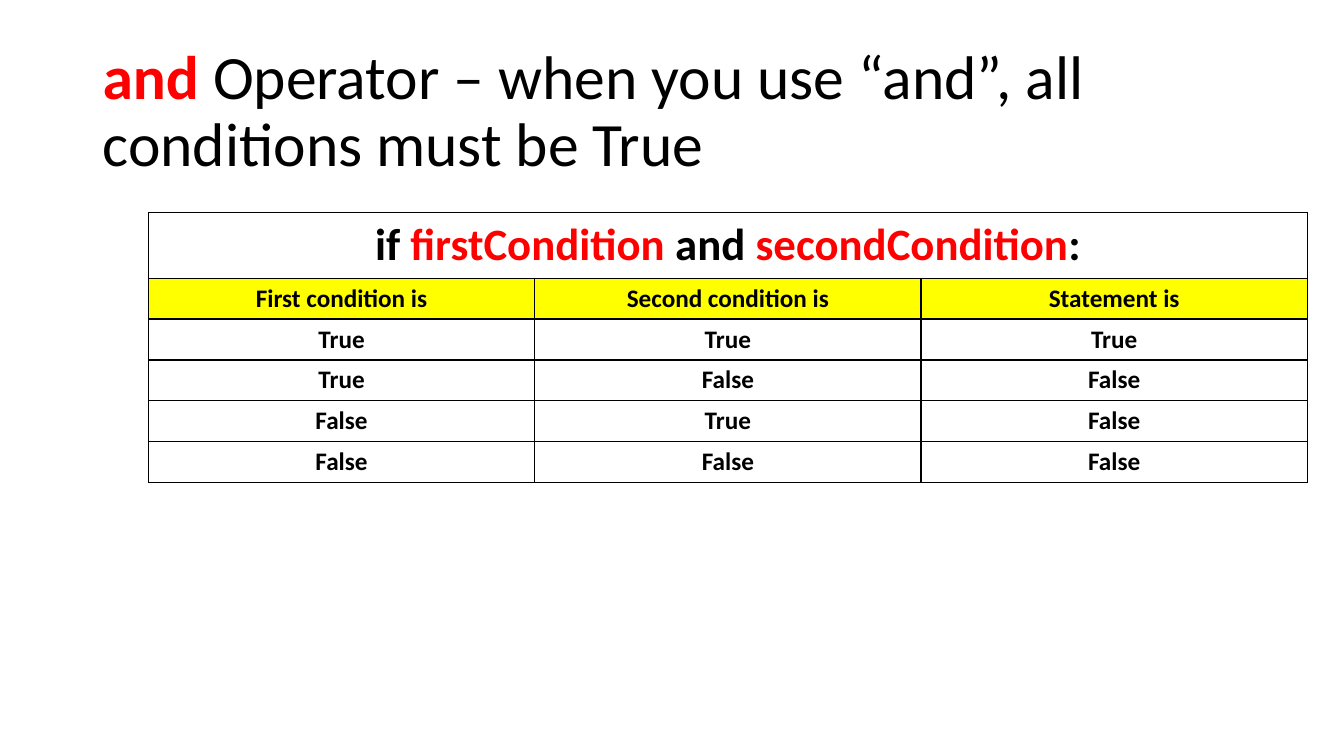
from dataclasses import dataclass
from itertools import product

from lxml import etree
from pptx import Presentation
from pptx.dml.color import RGBColor
from pptx.enum.text import MSO_ANCHOR, MSO_AUTO_SIZE, PP_ALIGN
from pptx.oxml.ns import qn
from pptx.util import Cm, Pt

LEFT = PP_ALIGN.LEFT
CENTER = PP_ALIGN.CENTER
MIDDLE = MSO_ANCHOR.MIDDLE
NO_AUTOFIT = MSO_AUTO_SIZE.NONE
TITLE_ONLY = 5


@dataclass(frozen=True)
class Theme:
    font: str = "Calibri"
    ink: str = "000000"
    accent: str = "FF0000"
    header: str = "FFFF00"
    title_size: int = 44
    rule_size: int = 32
    cell_size: int = 18
    border: int = 1


THEME = Theme()


@dataclass(frozen=True)
class Box:
    left: float
    top: float
    width: float
    height: float

    def lengths(self):
        return Cm(self.left), Cm(self.top), Cm(self.width), Cm(self.height)


def add_text(para, text, size, color=THEME.ink, bold=False):
    span = para.add_run()
    span.text = text
    span.font.name = THEME.font
    span.font.size = Pt(size)
    span.font.bold = bold
    span.font.color.rgb = RGBColor.from_string(color)


def add_borders(cell):
    properties = cell._tc.get_or_add_tcPr()
    for side in ("a:lnL", "a:lnR", "a:lnT", "a:lnB"):
        line = etree.SubElement(properties, qn(side), w=str(Pt(THEME.border)))
        fill = etree.SubElement(line, qn("a:solidFill"))
        etree.SubElement(fill, qn("a:srgbClr"), val=THEME.ink)


def format_cell(cell, fill=None):
    add_borders(cell)
    if fill:
        cell.fill.solid()
        cell.fill.fore_color.rgb = RGBColor.from_string(fill)
    else:
        cell.fill.background()
    para = cell.text_frame.paragraphs[0]
    para.alignment = CENTER
    return para


def fill_title(page, box):
    title = page.shapes.title
    title.left, title.top, title.width, title.height = box.lengths()
    frame = title.text_frame
    frame.word_wrap = True
    frame.auto_size = NO_AUTOFIT
    frame.vertical_anchor = MIDDLE
    para = frame.paragraphs[0]
    para.alignment = LEFT
    para.line_spacing = 0.9
    add_text(para, "and", THEME.title_size, color=THEME.accent, bold=True)
    add_text(para, " Operator – when you use “and”, all conditions must be True",
             THEME.title_size)


def add_truth_table(page, box, rule_height):
    headings = ("First condition is", "Second condition is", "Statement is")
    outcomes = [(first, second, first and second)
                for first, second in product((True, False), repeat=2)]
    body = [headings, *outcomes]
    table = page.shapes.add_table(
        len(body) + 1, len(headings), *box.lengths()).table
    table.first_row = False
    table.horz_banding = False
    for column in table.columns:
        column.width = Cm(box.width / len(headings))
    for row in table.rows:
        row.height = Cm((box.height - rule_height) / len(body))
    table.rows[0].height = Cm(rule_height)

    table.cell(0, 0).merge(table.cell(0, len(headings) - 1))
    rule = [format_cell(cell) for cell in table.rows[0].cells][0]
    for text, color in (("if ", THEME.ink), ("firstCondition ", THEME.accent),
                        ("and ", THEME.ink), ("secondCondition", THEME.accent),
                        (":", THEME.ink)):
        add_text(rule, text, THEME.rule_size, color=color, bold=True)

    for row_number, values in enumerate(body, start=1):
        fill = THEME.header if values is headings else None
        for cell, value in zip(table.rows[row_number].cells, values):
            add_text(format_cell(cell, fill), str(value), THEME.cell_size,
                     bold=True)


def main():
    deck = Presentation()
    deck.slide_width, deck.slide_height = Cm(33.87), Cm(19.05)
    page = deck.slides.add_slide(deck.slide_layouts[TITLE_ONLY])
    fill_title(page, Box(2.33, 1.01, 29.21, 3.68))
    add_truth_table(page, Box(3.74, 5.36, 29.21, 6.8), rule_height=1.65)
    deck.save("out.pptx")


if __name__ == "__main__":
    main()
